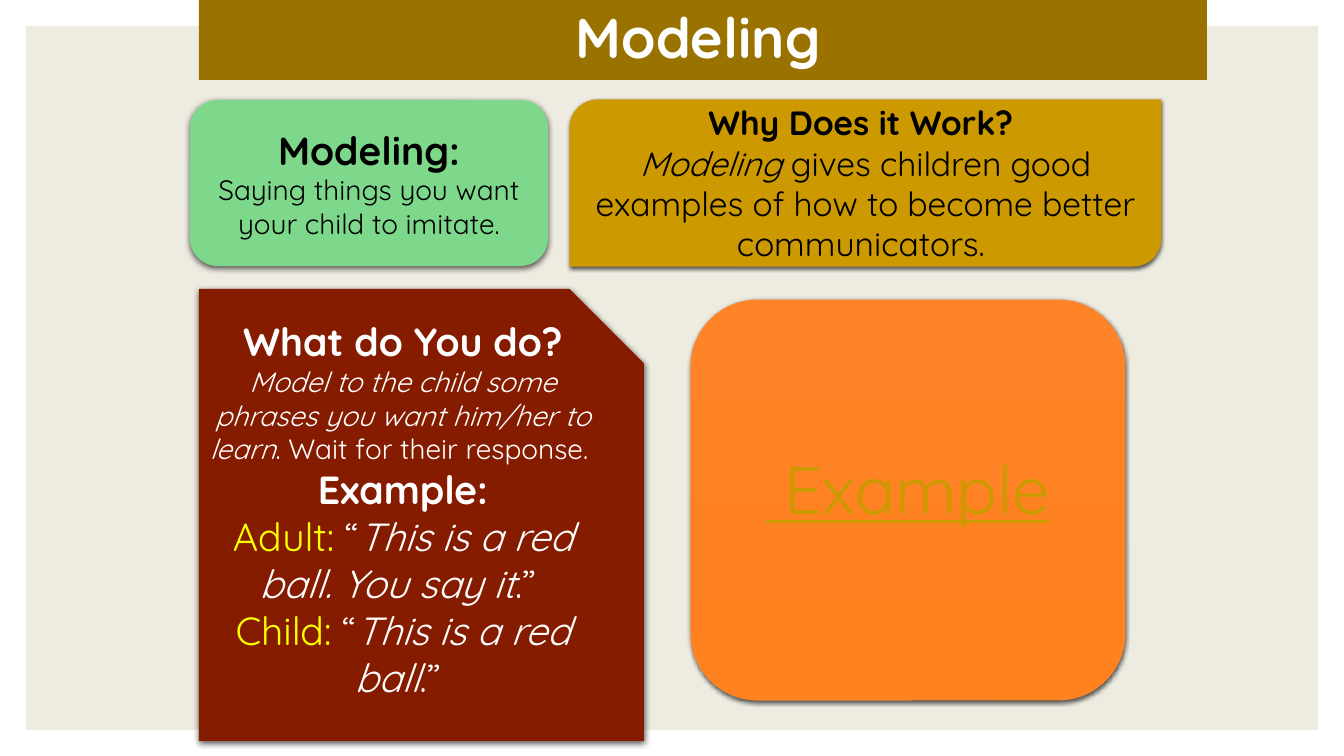
from lxml import etree
from pptx import Presentation
from pptx import util as u
from pptx.dml.color import RGBColor
from pptx.enum import shapes, text
from pptx.oxml import ns

EMU_PER_PX = 914400 / 100.8
SHAPE = shapes.MSO_SHAPE
BLACK, WHITE, YELLOW, GOLD = "000000", "FFFFFF", "FFFF00", "CC9900"


def px(length):
    """Turn whole pixels into EMU."""
    return u.Emu(round(length * EMU_PER_PX))


def rgb(value):
    """Turn a hex string into a colour."""
    return RGBColor.from_string(value)


class SlideBuilder:
    """Draws panels and their text on one slide."""

    font = "Quicksand"

    def __init__(self, presentation):
        """Add a blank slide to the presentation."""
        self.slide = presentation.slides.add_slide(presentation.slide_layouts[6])

    def panel(self, kind, box, fill, corners=(), line=None, shadow=None):
        """Add a shape with a plain fill, or a gradient for a pair of colours."""
        shape = self.slide.shapes.add_shape(kind, *map(px, box))
        for index, corner in enumerate(corners):
            shape.adjustments[index] = corner
        if isinstance(fill, str):
            shape.fill.solid()
            shape.fill.fore_color.rgb = rgb(fill)
        else:
            shape.fill.gradient()
            shape.fill.gradient_angle = 270
            for stop, colour in zip(shape.fill.gradient_stops, fill):
                stop.color.rgb = rgb(colour)
        if line:
            shape.line.color.rgb = rgb(line)
            shape.line.width = u.Pt(0.75)
        else:
            shape.line.fill.background()
        shape.shadow.inherit = False
        if shadow:
            self.drop_shadow(shape, *shadow)
        return shape

    def drop_shadow(self, shape, blur, distance):
        """Cast a soft black shadow straight down."""
        effects = shape._element.spPr.find(ns.qn("a:effectLst"))
        outer = etree.SubElement(
            effects, ns.qn("a:outerShdw"), blurRad=str(u.Pt(blur)),
            dist=str(u.Pt(distance)), dir="5400000", algn="ctr", rotWithShape="0")
        black = etree.SubElement(outer, ns.qn("a:srgbClr"), val=BLACK)
        etree.SubElement(black, ns.qn("a:alpha"), val="63000")

    def label(self, shape, paragraphs, colour, bottom=5, spacing=None):
        """Fill a shape with centred paragraphs of (text, size, style, colour) runs."""
        frame = shape.text_frame
        frame.word_wrap = True
        frame.vertical_anchor = text.MSO_ANCHOR.MIDDLE
        frame.margin_left = frame.margin_right = px(10)
        frame.margin_top, frame.margin_bottom = px(5), px(bottom)
        for index, runs in enumerate(paragraphs):
            paragraph = frame.add_paragraph() if index else frame.paragraphs[0]
            paragraph.alignment = text.PP_ALIGN.CENTER
            paragraph.line_spacing = spacing
            for words, size, style, *own_colour in runs:
                run = paragraph.add_run()
                run.text = words
                font = run.font
                font.name, font.size = self.font, u.Pt(size)
                font.bold, font.italic = "b" in style, "i" in style
                font.underline = "u" in style
                font.color.rgb = rgb(own_colour[0] if own_colour else colour)


def spoken(speaker, sentence):
    """Return the runs of one quoted line of the dialogue."""
    return [(f"{speaker}: ", 28, "", YELLOW), ("“", 28, ""),
            (sentence, 28, "i"), (".” ", 28, "")]


def main():
    """Build and save the slide."""
    presentation = Presentation()
    presentation.slide_width, presentation.slide_height = px(1344), px(756)
    builder = SlideBuilder(presentation)
    deep, light = (4.5, 1.5), (3, 1)
    round_corner = 0.167

    builder.panel(SHAPE.RECTANGLE, (26, 26, 1292, 704), "EEECE1")

    title = builder.panel(SHAPE.RECTANGLE, (199, 0, 1008, 80), "997200")
    builder.label(title, [[("Modeling", 40, "b"), (" ", 24, "b")]], WHITE, spacing=0.9)

    definition = builder.panel(SHAPE.ROUNDED_RECTANGLE, (190, 100, 358, 166),
                               "7ED88C", [round_corner], shadow=deep)
    builder.label(definition, [
        [("Modeling:", 28, "b")],
        [("Saying things you want your child to imitate.", 20, "")],
    ], BLACK)

    reason = builder.panel(SHAPE.ROUND_2_DIAG_RECTANGLE, (570, 100, 591, 166),
                           (GOLD, "CF9900"), [round_corner, 0], GOLD, light)
    builder.label(reason, [
        [("Why Does it Work? ", 24, "b")],
        [("Modeling ", 24, "i"),
         ("gives children good examples of how to become better communicators. ", 24, "")],
    ], BLACK)

    steps = builder.panel(SHAPE.SNIP_1_RECTANGLE, (199, 289, 445, 452),
                          "851C00", [round_corner], shadow=deep)
    builder.label(steps, [
        [("What do You do?", 28, "b")],
        [("Model to the child some phrases you want him/her to learn", 20, "i"),
         (". Wait for their response. ", 20, "")],
        [("Example:", 28, "b")],
        spoken("Adult", "This is a red ball. You say it"),
        spoken("Child", "This is a red ball"),
    ], WHITE, bottom=54)

    example = builder.panel(SHAPE.ROUNDED_RECTANGLE, (691, 300, 434, 400),
                            ("FF8427", "FF811F"), [round_corner], "FF8427", light)
    builder.label(example, [[(" Example", 48, "u")]], GOLD, bottom=29)

    presentation.save("out.pptx")


if __name__ == "__main__":
    main()
